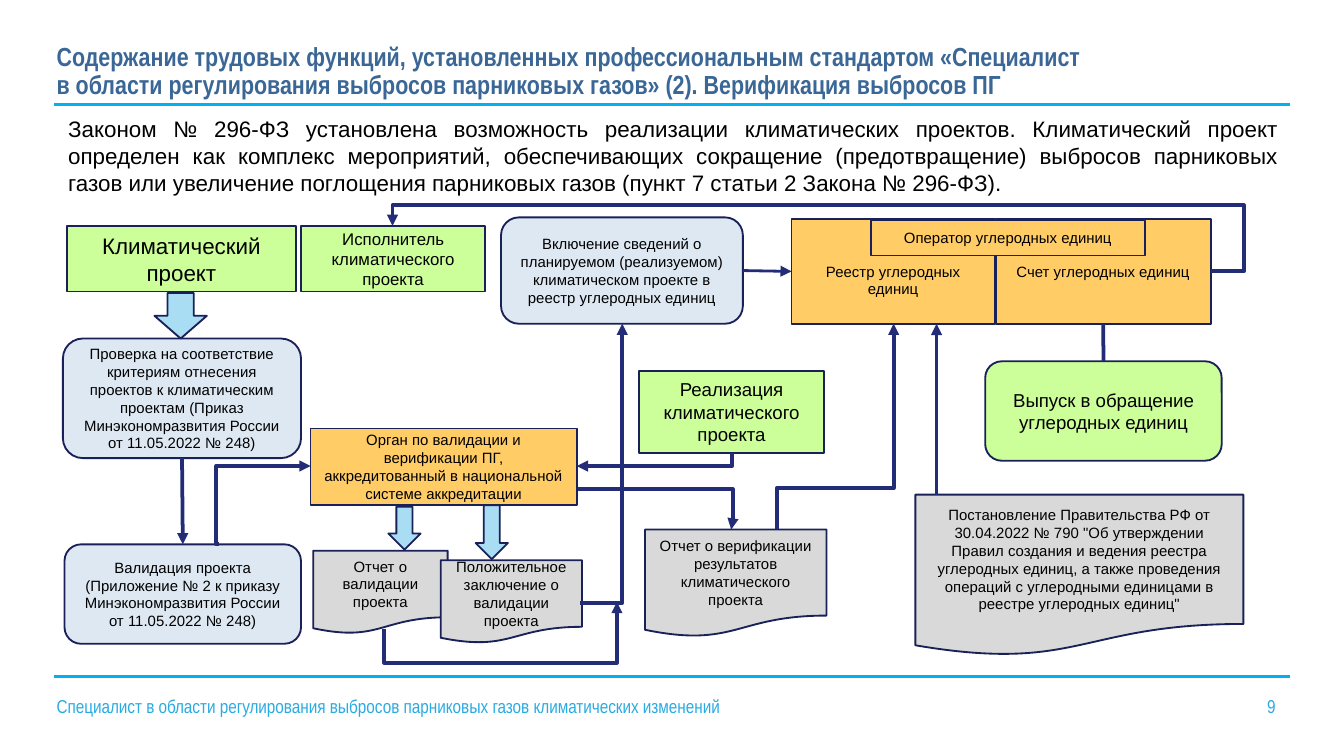
from lxml import etree
from pptx import Presentation
from pptx.dml.color import RGBColor
from pptx.enum.shapes import MSO_CONNECTOR, MSO_SHAPE
from pptx.enum.text import MSO_ANCHOR, PP_ALIGN
from pptx.oxml.ns import qn
from pptx.util import Cm, Pt

STRAIGHT, ELBOW = MSO_CONNECTOR.STRAIGHT, MSO_CONNECTOR.ELBOW
PROCESS = MSO_SHAPE.FLOWCHART_PROCESS
ROUNDED = MSO_SHAPE.FLOWCHART_ALTERNATE_PROCESS
DOCUMENT = MSO_SHAPE.FLOWCHART_DOCUMENT
DOWN_ARROW = MSO_SHAPE.DOWN_ARROW
MIDDLE, BOTTOM = MSO_ANCHOR.MIDDLE, MSO_ANCHOR.BOTTOM
LEFT, CENTER, JUSTIFY = PP_ALIGN.LEFT, PP_ALIGN.CENTER, PP_ALIGN.JUSTIFY

BLACK = RGBColor(0x00, 0x00, 0x00)
TITLE_BLUE = RGBColor(0x3A, 0x67, 0x96)
FOOTER_BLUE = RGBColor(0x29, 0xAB, 0xE2)
RULE_BLUE = RGBColor(0x00, 0xB0, 0xF0)
FLOW_BLUE = RGBColor(0x23, 0x2C, 0x77)
OUTLINE = RGBColor(0x1A, 0x21, 0x58)
ORANGE = RGBColor(0xFF, 0xCC, 0x66)
GREEN = RGBColor(0xCC, 0xFF, 0x99)
PALE_BLUE = RGBColor(0xDE, 0xE8, 0xF2)
ARROW_BLUE = RGBColor(0xA9, 0xDD, 0xF3)
GRAY = RGBColor(0xD9, 0xD9, 0xD9)


def write(frame, text, size, color=BLACK, font="Arial", align=LEFT, bold=False):
    frame.word_wrap = True
    paragraph = frame.paragraphs[0]
    paragraph.alignment = align
    run = paragraph.add_run()
    run.text = text
    run.font.size = Pt(size)
    run.font.name = font
    run.font.bold = bold
    run.font.color.rgb = color
    return paragraph


def add_title(slide, text):
    title = slide.shapes.title
    title.left, title.top, title.width, title.height = Cm(1.07), Cm(0.71), Cm(19.84), Cm(1.32)
    frame = title.text_frame
    frame.vertical_anchor = BOTTOM
    frame.margin_left = 0
    write(frame, text, 14, TITLE_BLUE, "Arial Narrow", bold=True).line_spacing = 0.9


def add_intro(slide, text):
    intro = slide.shapes.add_textbox(Cm(1.04), Cm(2.06), Cm(23.39), Cm(1.8))
    write(intro.text_frame, text, 12, align=JUSTIFY)


def add_footer(slide, text, number):
    footer = slide.shapes.add_textbox(Cm(1.07), Cm(13.13), Cm(23.39), Cm(0.76))
    frame = footer.text_frame
    frame.margin_left = frame.margin_right = frame.margin_top = 0
    properties = frame.paragraphs[0]._p.get_or_add_pPr()
    tabs = etree.SubElement(properties, qn("a:tabLst"))
    etree.SubElement(tabs, qn("a:tab"), pos=str(Cm(23.04)), algn="r")
    write(frame, f"{text}\t{number}", 10, FOOTER_BLUE, "Arial Narrow")


def add_block(slide, kind, fill, left, top, width, height, text="", size=8):
    block = slide.shapes.add_shape(kind, Cm(left), Cm(top), Cm(width), Cm(height))
    block.shadow.inherit = False
    block.fill.solid()
    block.fill.fore_color.rgb = fill
    block.line.color.rgb = OUTLINE
    block.line.width = Pt(1)
    if text:
        block.text_frame.vertical_anchor = MIDDLE
        write(block.text_frame, text, size, align=CENTER)
    return block


def style_connector(connector, color, width, arrow):
    connector.line.color.rgb = color
    connector.line.width = Pt(width)
    if arrow:
        etree.SubElement(connector.line._get_or_add_ln(), qn("a:tailEnd"), type="triangle")
    etree.SubElement(connector._element.spPr, qn("a:effectLst"))


def add_line(slide, begin, end, color=FLOW_BLUE, width=2, arrow=True):
    line = slide.shapes.add_connector(STRAIGHT, *map(Cm, begin + end))
    style_connector(line, color, width, arrow)


def join(slide, source, source_side, target, target_side, width=2, arrow=True):
    link = slide.shapes.add_connector(STRAIGHT, 0, 0, 0, 0)
    link.begin_connect(source, source_side)
    link.end_connect(target, target_side)
    style_connector(link, FLOW_BLUE, width, arrow)


def add_elbow(slide, begin, end, bends=(), rotation=0, flips=""):
    (x1, y1), (x2, y2) = begin, end
    width, height = abs(x2 - x1), abs(y2 - y1)
    if rotation % 180:
        width, height = height, width
    left, top = (x1 + x2 - width) / 2, (y1 + y2 - height) / 2
    elbow = slide.shapes.add_connector(
        ELBOW, Cm(left), Cm(top), Cm(left + width), Cm(top + height))
    properties = elbow._element.spPr
    frame = properties.find(qn("a:xfrm"))
    frame.set("rot", str(rotation * 60000))
    for flip in flips:
        frame.set(f"flip{flip}", "1")
    geometry = properties.find(qn("a:prstGeom"))
    geometry.set("prst", f"bentConnector{len(bends) + 2}")
    guides = geometry.find(qn("a:avLst"))
    for number, bend in enumerate(bends, 1):
        etree.SubElement(guides, qn("a:gd"), name=f"adj{number}",
                         fmla=f"val {round(bend * 100000)}")
    style_connector(elbow, FLOW_BLUE, 2, True)


def main():
    deck = Presentation()
    deck.slide_width, deck.slide_height = Cm(25.4), Cm(14.29)
    slide = deck.slides.add_slide(deck.slide_layouts[5])

    for y in (1.98, 12.78):
        add_line(slide, (1.02, y), (24.38, y), RULE_BLUE, 1.5, arrow=False)
    add_title(slide, "Содержание трудовых функций, установленных профессиональным стандартом "
              "«Специалист в области регулирования выбросов парниковых газов» (2). "
              "Верификация выбросов ПГ")
    add_footer(slide, "Специалист в области регулирования выбросов парниковых газов "
               "климатических изменений", 9)
    add_intro(slide, "Законом № 296-ФЗ установлена возможность реализации климатических "
              "проектов. Климатический проект определен как комплекс мероприятий, "
              "обеспечивающих сокращение (предотвращение) выбросов парниковых газов или "
              "увеличение поглощения парниковых газов (пункт 7 статьи 2 Закона № 296-ФЗ).")

    account = add_block(slide, PROCESS, ORANGE, 18.82, 4.14, 4.06, 1.98,
                        "Счет углеродных единиц")
    registry = add_block(slide, PROCESS, ORANGE, 14.96, 4.14, 3.84, 1.98,
                         "Реестр углеродных единиц")
    registry.text_frame.margin_top = Cm(0.45)
    add_block(slide, PROCESS, ORANGE, 16.46, 4.17, 5.18, 0.66, "Оператор углеродных единиц")
    add_block(slide, PROCESS, GREEN, 1.27, 4.27, 4.32, 1.24, "Климатический проект", 12)
    add_block(slide, PROCESS, GREEN, 5.69, 4.27, 3.48, 1.24,
              "Исполнитель климатического проекта", 9)
    check = add_block(slide, ROUNDED, PALE_BLUE, 1.19, 6.4, 4.5, 2.26,
                      "Проверка на соответствие критериям отнесения проектов к климатическим "
                      "проектам (Приказ Минэкономразвития России от 11.05.2022 № 248)")
    validation = add_block(slide, ROUNDED, PALE_BLUE, 1.22, 10.29, 4.47, 1.88,
                           "Валидация проекта (Приложение № 2 к приказу "
                           "Минэкономразвития России от 11.05.2022 № 248)")
    inclusion = add_block(slide, ROUNDED, PALE_BLUE, 9.47, 4.11, 4.57, 2.01,
                          "Включение сведений о планируемом (реализуемом) климатическом "
                          "проекте в реестр углеродных единиц")
    add_block(slide, PROCESS, ORANGE, 5.87, 8.1, 5.03, 1.45,
              "Орган по валидации и верификации ПГ, аккредитованный в национальной "
              "системе аккредитации")
    add_block(slide, DOCUMENT, GRAY, 5.92, 10.41, 2.54, 1.57, "Отчет о валидации проекта")
    add_block(slide, DOCUMENT, GRAY, 8.33, 10.59, 2.67, 1.57,
              "Положительное заключение о валидации проекта")
    add_block(slide, PROCESS, GREEN, 12.07, 7.01, 3.51, 1.55,
              "Реализация климатического проекта", 10)
    add_block(slide, DOCUMENT, GRAY, 12.19, 10.01, 3.43, 2.03,
              "Отчет о верификации результатов климатического проекта")
    issue = add_block(slide, ROUNDED, GREEN, 18.62, 6.83, 4.47, 1.88,
                      "Выпуск в обращение углеродных единиц", 10)
    add_block(slide, DOCUMENT, GRAY, 17.3, 9.35, 6.2, 3.05,
              "Постановление Правительства РФ от 30.04.2022 № 790 \"Об утверждении Правил "
              "создания и ведения реестра углеродных единиц, а также проведения операций "
              "с углеродными единицами в реестре углеродных единиц\"")

    for box in ((2.92, 5.54, 0.99, 0.86), (7.34, 9.58, 0.61, 0.81), (8.99, 9.55, 0.61, 1.02)):
        add_block(slide, DOWN_ARROW, ARROW_BLUE, *box)

    join(slide, check, 2, validation, 0)
    join(slide, issue, 0, account, 2, arrow=False)
    join(slide, inclusion, 3, registry, 1, width=1.5)
    add_line(slide, (17.7, 9.35), (17.7, 6.12))

    add_elbow(slide, (10.97, 11.4), (11.76, 6.12), flips="V")
    add_elbow(slide, (13.84, 8.56), (10.9, 8.81), rotation=90)
    add_elbow(slide, (10.92, 9.25), (13.82, 10.01), (1.01,))
    add_elbow(slide, (7.26, 11.89), (11.66, 11.38), (-1.25, 1), 90, "HV")
    add_elbow(slide, (14.68, 10.01), (16.89, 6.12), (0.2,), 90, "HV")
    add_elbow(slide, (22.89, 5.13), (7.42, 4.27), (-0.04, 1.45), flips="HV")
    add_elbow(slide, (4.14, 10.29), (5.87, 8.81), (-0.03,), flips="V")

    deck.save("out.pptx")


if __name__ == "__main__":
    main()
